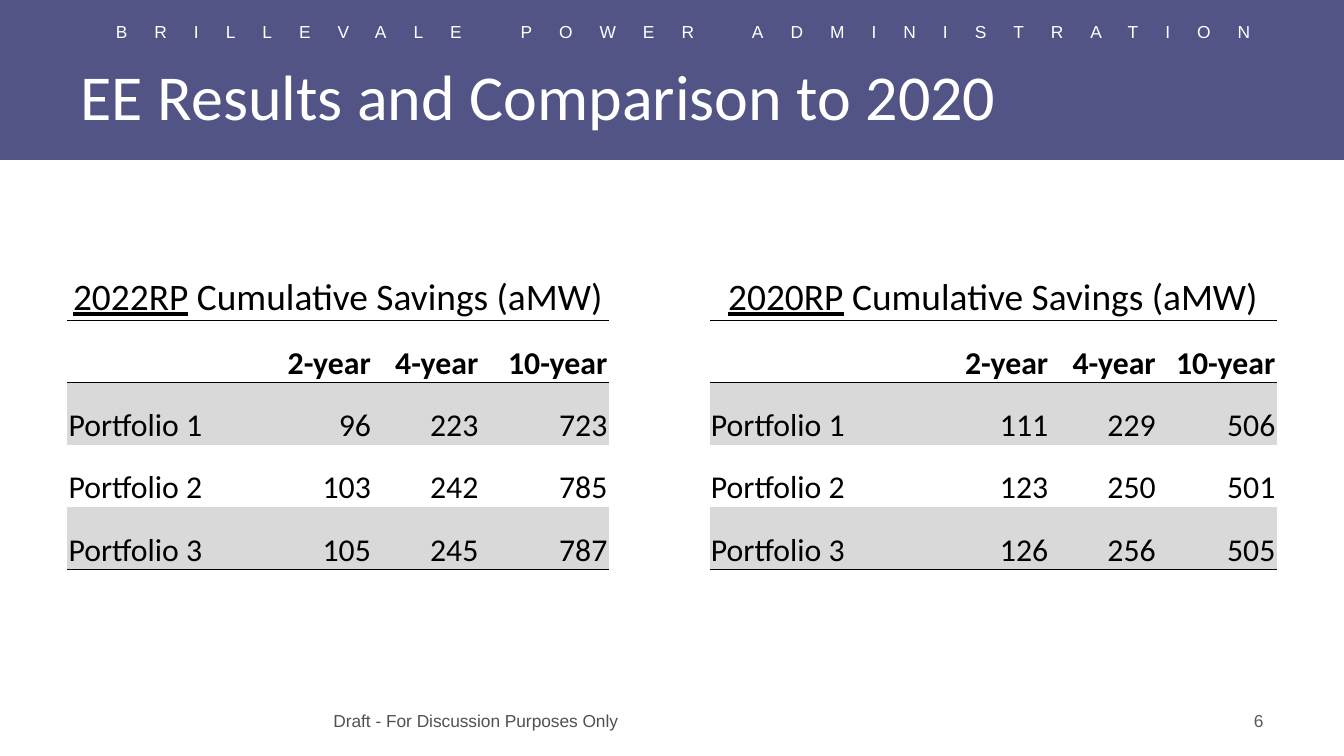
from dataclasses import dataclass
from typing import Optional

from lxml.etree import SubElement
from pptx import Presentation
from pptx.dml.color import RGBColor as RGB
from pptx.enum.shapes import MSO_SHAPE
from pptx.enum.text import MSO_ANCHOR as ANCHOR, MSO_AUTO_SIZE as AUTO, PP_ALIGN as ALIGN
from pptx.oxml.ns import qn
from pptx.util import Inches, Pt


@dataclass(frozen=True)
class Theme:
    band: RGB = RGB.from_string("535486")
    white: RGB = RGB.from_string("FFFFFF")
    black: RGB = RGB.from_string("000000")
    stripe: RGB = RGB.from_string("D9D9D9")
    footer: RGB = RGB.from_string("515151")
    number: RGB = RGB.from_string("595959")
    head_font: str = "Calibri"
    small_font: str = "Arial"
    title_pt: float = 34.3
    caption_pt: float = 20
    cell_pt: float = 17
    small_pt: float = 9.3
    rule_pt: float = 0.5


@dataclass(frozen=True)
class Label:
    text: str
    box: tuple[float, float, float, float]
    align: ALIGN
    color: RGB
    anchor: ANCHOR = ANCHOR.MIDDLE
    spacing: Optional[float] = None


@dataclass(frozen=True)
class Savings:
    plan: str
    first_col: int
    rows: tuple[tuple[int, int, int], ...]


THEME = Theme()
SLIDE_WIDTH = 10
SLIDE_HEIGHT = SLIDE_WIDTH * 9 / 16
NO_STYLE_NO_GRID = "{2D5ABB26-0587-4C30-8999-92F81FD0307C}"
COL_WIDTHS = (1.52, 0.75, 0.8, 0.96, 0.75, 1.8, 0.73, 0.8, 0.89)
ROW_COUNT = 5
YEARS = ("2-year", "4-year", "10-year")
RULES_BY_ROW = {0: ("lnB",), 1: ("lnT", "lnB"), 2: ("lnT",), 4: ("lnB",)}
STRIPED_ROWS = (2, 4)

LABELS = (
    Label("BRILLEVALE POWER ADMINISTRATION", (0, 0.11, 10.17, 0.26), ALIGN.CENTER,
          THEME.white, ANCHOR.TOP, 14.5),
    Label("6", (7.17, 5.21, 2.33, 0.3), ALIGN.RIGHT, THEME.number),
    Label("Draft - For Discussion Purposes Only", (0.5, 5.21, 6.08, 0.3), ALIGN.CENTER,
          THEME.footer),
)
SAVINGS = (
    Savings("2022RP", 0, ((96, 223, 723), (103, 242, 785), (105, 245, 787))),
    Savings("2020RP", 5, ((111, 229, 506), (123, 250, 501), (126, 256, 505))),
)


def style_run(r, font: str, size: float, color: RGB, bold: bool = False) -> None:
    r.font.name, r.font.size, r.font.bold = font, Pt(size), bold
    r.font.color.rgb = color


def add_band(s) -> None:
    sp = s.shapes.add_shape(MSO_SHAPE.RECTANGLE, 0, Inches(-0.01),
                            Inches(SLIDE_WIDTH), Inches(1.2))
    sp.shadow.inherit = False
    sp.fill.solid()
    sp.fill.fore_color.rgb = THEME.band
    sp.line.fill.background()


def add_label(s, label: Label) -> None:
    tf = s.shapes.add_textbox(*map(Inches, label.box)).text_frame
    tf.word_wrap = True
    tf.vertical_anchor = label.anchor
    p = tf.paragraphs[0]
    p.text, p.alignment = label.text, label.align
    r = p.runs[0]
    style_run(r, THEME.small_font, THEME.small_pt, label.color)
    if label.spacing:
        r.font._element.set("spc", str(round(label.spacing * 100)))


def set_title(s, text: str) -> None:
    """Fill the title placeholder and bring it in front of the band."""
    title = s.shapes.title
    title.left, title.top, title.width, title.height = map(Inches, (0.5, 0.5, 9, 0.49))
    tf = title.text_frame
    tf.text = text
    tf.auto_size, tf.vertical_anchor = AUTO.NONE, ANCHOR.MIDDLE
    p = tf.paragraphs[0]
    p.alignment, p.line_spacing = ALIGN.LEFT, 0.9
    style_run(p.runs[0], THEME.head_font, THEME.title_pt, THEME.white)
    s.shapes.element.append(title.element)


def set_edge(cell, edge: str, ruled: bool) -> None:
    ln = SubElement(cell._tc.get_or_add_tcPr(), qn(f"a:{edge}"), w=str(Pt(THEME.rule_pt)))
    if ruled:
        SubElement(SubElement(ln, qn("a:solidFill")), qn("a:srgbClr"), val=str(THEME.black))
    else:
        SubElement(ln, qn("a:noFill"))


def format_cell(cell, row: int) -> None:
    cell.vertical_anchor = ANCHOR.BOTTOM
    cell.margin_left = cell.margin_right = cell.margin_top = Inches(0.01)
    cell.margin_bottom = 0
    for edge in ("lnT", "lnB"):
        set_edge(cell, edge, edge in RULES_BY_ROW.get(row, ()))
    if row in STRIPED_ROWS:
        cell.fill.solid()
        cell.fill.fore_color.rgb = THEME.stripe
    else:
        cell.fill.background()


def write_cell(cell, text: str, align: ALIGN, bold: bool = False) -> None:
    p = cell.text_frame.paragraphs[0]
    p.text, p.alignment = text, align
    style_run(p.runs[0], THEME.head_font, THEME.cell_pt, THEME.black, bold)


def write_caption(cell, plan: str) -> None:
    p = cell.text_frame.paragraphs[0]
    p.alignment = ALIGN.CENTER
    for text, underline in ((plan, True), (" Cumulative Savings (aMW)", False)):
        r = p.add_run()
        r.text = text
        style_run(r, THEME.head_font, THEME.caption_pt, THEME.black)
        r.font.underline = underline


def fill_savings(table, savings: Savings) -> None:
    first = savings.first_col
    last = first + len(YEARS)
    for row in range(ROW_COUNT):
        for col in range(first, last + 1):
            format_cell(table.cell(row, col), row)
    table.cell(0, first).merge(table.cell(0, last))
    write_caption(table.cell(0, first), savings.plan)
    for col, year in enumerate(YEARS, first + 1):
        write_cell(table.cell(1, col), year, ALIGN.RIGHT, bold=True)
    for number, values in enumerate(savings.rows, 1):
        write_cell(table.cell(number + 1, first), f"Portfolio {number}", ALIGN.LEFT)
        for col, value in enumerate(values, first + 1):
            write_cell(table.cell(number + 1, col), str(value), ALIGN.RIGHT)


def add_savings_table(s) -> None:
    frame = s.shapes.add_table(ROW_COUNT, len(COL_WIDTHS), Inches(0.5), Inches(1.92),
                               Inches(9), Inches(2.32))
    table = frame.table
    table.first_row = table.horz_banding = False
    table._tbl.tblPr.find(qn("a:tableStyleId")).text = NO_STYLE_NO_GRID
    for column, width in zip(table.columns, COL_WIDTHS):
        column.width = Inches(width)
    for savings in SAVINGS:
        fill_savings(table, savings)


def main() -> None:
    prs = Presentation()
    prs.slide_width, prs.slide_height = Inches(SLIDE_WIDTH), Inches(SLIDE_HEIGHT)
    s = prs.slides.add_slide(prs.slide_layouts.get_by_name("Title Only"))
    add_band(s)
    for label in LABELS:
        add_label(s, label)
    set_title(s, "EE Results and Comparison to 2020")
    add_savings_table(s)
    prs.save("out.pptx")


if __name__ == "__main__":
    main()
